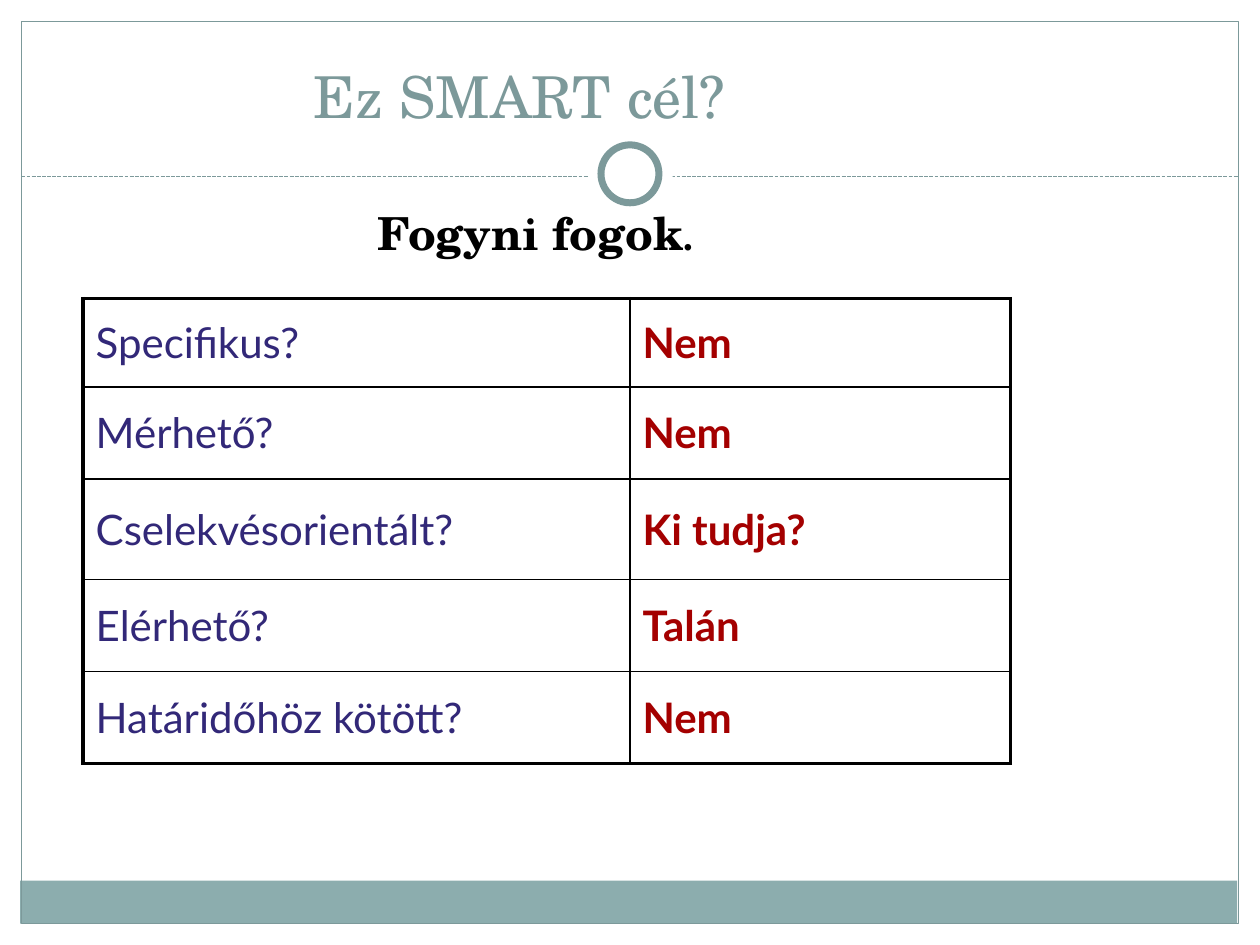
from lxml.etree import SubElement
from pptx import Presentation
from pptx.dml.color import RGBColor
from pptx.enum.dml import MSO_LINE
from pptx.enum.shapes import MSO_CONNECTOR, MSO_SHAPE
from pptx.enum.text import MSO_ANCHOR, MSO_AUTO_SIZE, PP_ALIGN
from pptx.oxml import parse_xml
from pptx.oxml.ns import nsdecls, qn
from pptx.util import Inches, Pt

SERIF, SANS = "TeX Gyre Schola", "Lato"
TEAL, BAND, WHITE, BLACK = "7C999A", "8CADAE", "FFFFFF", "000000"
QUESTION, ANSWER = "322878", "A40000"


def color(value):
    return RGBColor.from_string(value)


def write(para, text, ink, **formats):
    span = para.add_run()
    span.text = text
    span.font.color.rgb = color(ink)
    for name, value in formats.items():
        setattr(span.font, name, value)


deck = Presentation()
deck.slide_width, deck.slide_height = Inches(10), Inches(7.5)
page = deck.slides.add_slide(deck.slide_layouts[1])

# Bottom band and page frame, dashed rule, ring with a white gap around it
rule = page.shapes.add_connector(
    MSO_CONNECTOR.STRAIGHT, Inches(0.17), Inches(1.4), Inches(9.83), Inches(1.4))
rule.line.color.rgb = color(TEAL)
rule.line.width = Pt(0.75)
rule.line.dash_style = MSO_LINE.SQUARE_DOT
SubElement(rule._element.spPr, qn("a:effectLst"))

decorations = [
    (MSO_SHAPE.RECTANGLE, (0.16, 6.99, 9.66, 0.34), BAND, None),
    (MSO_SHAPE.RECTANGLE, (0.17, 0.17, 9.66, 7.16), None, 0.75),
    (MSO_SHAPE.OVAL, (4.67, 1.05, 0.67, 0.67), WHITE, None),
    (MSO_SHAPE.OVAL, (4.77, 1.15, 0.46, 0.46), WHITE, 4),
]
for kind, place, fill, width in decorations:
    shape = page.shapes.add_shape(kind, *map(Inches, place))
    shape.shadow.inherit = False
    if fill:
        shape.fill.solid()
        shape.fill.fore_color.rgb = color(fill)
    else:
        shape.fill.background()
    if width:
        shape.line.color.rgb = color(TEAL)
        shape.line.width = Pt(width)
    else:
        shape.line.fill.background()

# Title and goal statement
title, goal = page.shapes.title, page.placeholders[1]
headings = [
    (title, (0.5, 0.08, 7.25, 1), MSO_ANCHOR.BOTTOM),
    (goal, (0.5, 1.58, 7.5, 0.83), MSO_ANCHOR.TOP),
]
for box, place, anchor in headings:
    box.left, box.top, box.width, box.height = map(Inches, place)
    frame = box.text_frame
    frame.auto_size = MSO_AUTO_SIZE.NONE
    frame.vertical_anchor = anchor
    frame.paragraphs[0].alignment = PP_ALIGN.CENTER

write(title.text_frame.paragraphs[0], "Ez SMART cél?", TEAL, name=SERIF, size=Pt(33))

para = goal.text_frame.paragraphs[0]
properties = para._p.get_or_add_pPr()
properties.set("marL", "0")
properties.set("indent", "0")
SubElement(properties, qn("a:buNone"))
for text, size in [("Fogyni fogok", 26), (".", 20)]:
    write(para, text, BLACK, name=SERIF, size=Pt(size), bold=True)

# SMART checklist
checklist = [
    ("Specifikus?", "Nem"),
    ("Mérhető?", "Nem"),
    ("Cselekvésorientált?", "Ki tudja?"),
    ("Elérhető?", "Talán"),
    ("Határidőhöz kötött?", "Nem"),
]
widths, heights = [4.34, 3.02], [0.7, 0.73, 0.8, 0.73, 0.73]
table = page.shapes.add_table(
    len(heights), len(widths), Inches(0.66), Inches(2.37),
    Inches(sum(widths)), Inches(sum(heights))).table
table.first_row = table.horz_banding = False
for column, width in zip(table.columns, widths):
    column.width = Inches(width)

last = len(heights) - 1
for r, (row, height) in enumerate(zip(table.rows, heights)):
    row.height = Inches(height)
    for c, cell in enumerate(row.cells):
        cell.fill.background()
        cell.vertical_anchor = MSO_ANCHOR.MIDDLE
        para = cell.text_frame.paragraphs[0]
        para.space_before = Pt(4.8)
        write(para, checklist[r][c], (QUESTION, ANSWER)[c],
              name=SANS, size=Pt(24), bold=c == 1)
        # Thick borders on the outer edge, thin ones inside
        outer = {"L": c == 0, "R": c == 1, "T": r == 0, "B": r == last}
        for position, (side, thick) in enumerate(outer.items()):
            border = parse_xml(
                f'<a:ln{side} {nsdecls("a")} w="{Pt(2.25 if thick else 1)}">'
                f'<a:solidFill><a:srgbClr val="{BLACK}"/></a:solidFill></a:ln{side}>')
            cell._tc.get_or_add_tcPr().insert(position, border)

deck.save("out.pptx")
